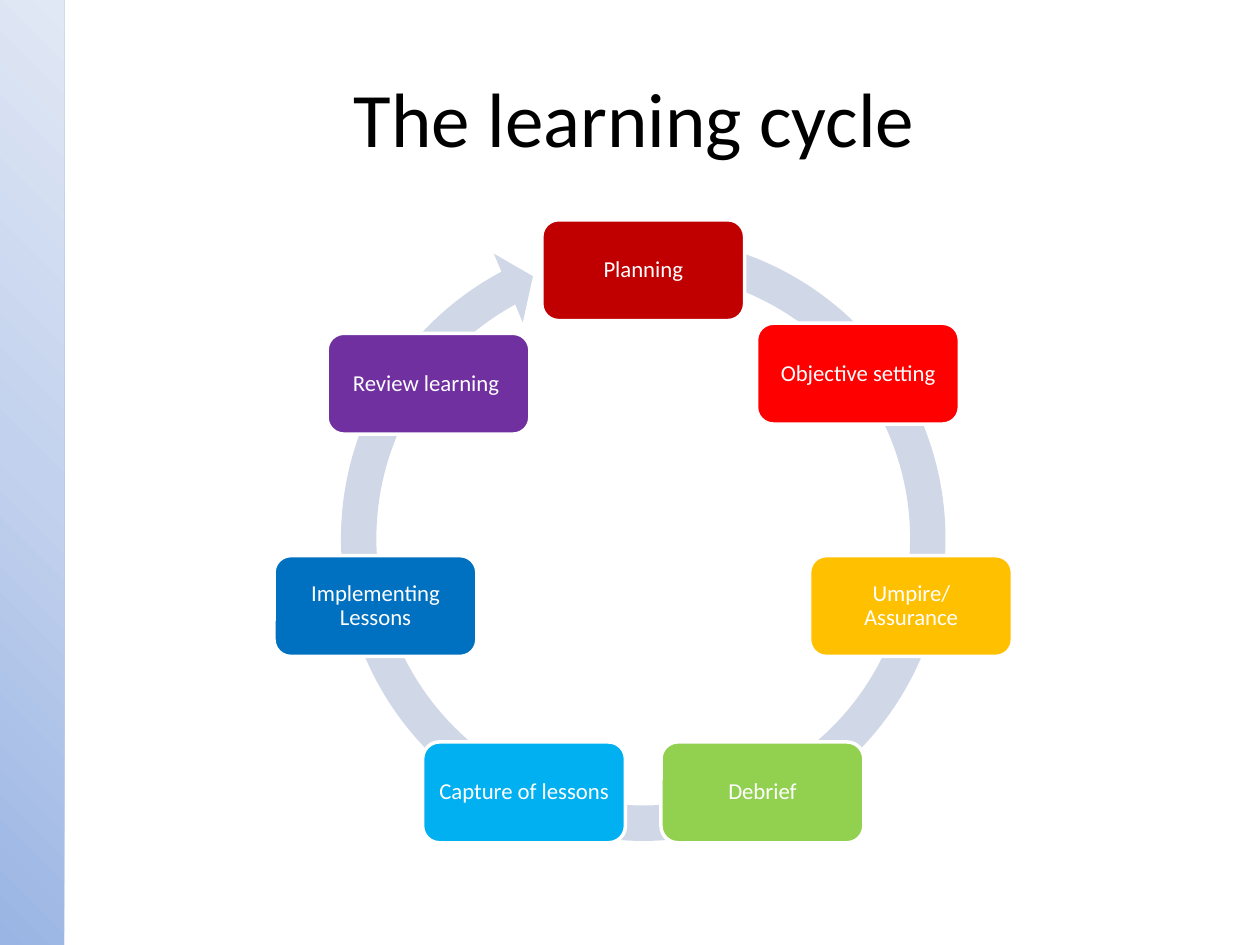
from math import cos, radians, sin

from lxml import etree
from pptx import Presentation
from pptx.dml.color import RGBColor
from pptx.enum.shapes import MSO_SHAPE
from pptx.enum.text import MSO_ANCHOR, PP_ALIGN
from pptx.oxml.ns import qn
from pptx.util import Inches, Pt

STEPS = [
    ("Planning", "C00000"),
    ("Objective setting", "FF0000"),
    ("Umpire/Assurance", "FFC000"),
    ("Debrief", "92D050"),
    ("Capture of lessons", "00B0F0"),
    ("Implementing Lessons", "0070C0"),
    ("Review learning ", "7030A0"),
]
STEP_NUDGE = {"Review learning ": 0.08}  # this step sits a little lower


def color(value):
    return RGBColor.from_string(value)


def add_filled_shape(page, kind, box, fill=None):
    shape = page.shapes.add_shape(kind, *(Inches(length) for length in box))
    shape.shadow.inherit = False
    shape.line.fill.background()
    if fill:
        shape.fill.solid()
        shape.fill.fore_color.rgb = color(fill)
    return shape


def write_text(shape, text, size, ink, inset, line_spacing=1.0):
    frame = shape.text_frame
    settings = {
        "word_wrap": True,
        "vertical_anchor": MSO_ANCHOR.MIDDLE,
        "margin_left": Inches(inset),
        "margin_right": Inches(inset),
        "margin_top": Inches(inset),
        "margin_bottom": Inches(inset),
    }
    for name, value in settings.items():
        setattr(frame, name, value)
    para = frame.paragraphs[0]
    para.alignment = PP_ALIGN.CENTER
    para.line_spacing = line_spacing
    span = para.add_run()
    span.text = text
    for name, value in {"name": "Calibri", "size": Pt(size)}.items():
        setattr(span.font, name, value)
    span.font.color.rgb = color(ink)


def add_side_band(page, box, stops):
    band = add_filled_shape(page, MSO_SHAPE.RECTANGLE, box)
    band.fill.gradient()
    band.fill.gradient_angle = 45
    # Replace the default stops with the three shades of the band
    stop_list = band.fill._fill._gradFill.find(qn("a:gsLst"))
    for stop in list(stop_list):
        stop_list.remove(stop)
    for percent, shade in stops:
        stop = etree.SubElement(stop_list, qn("a:gs"), pos=str(percent * 1000))
        etree.SubElement(stop, qn("a:srgbClr"), val=shade)


def add_title(page, box, text):
    title = page.shapes.add_textbox(*(Inches(length) for length in box))
    write_text(title, text, 44, "000000", 0.1)


def add_cycle(page, box):
    left, top, width, height = box
    # Ring with an arrowhead
    ring = add_filled_shape(page, MSO_SHAPE.CIRCULAR_ARROW, box, "D0D8E8")
    for index, value in enumerate([0.055, 3.307, 145.023, 169.579, 0.058]):
        ring.adjustments[index] = value

    # Steps, clockwise from the top at equal angles
    step_width, step_height, radius = 1.61, 0.8, 2.18
    center_x, center_y = left + width / 2, top + height / 2 + 0.05
    for index, (label, fill) in enumerate(STEPS):
        angle = radians(360 * index / len(STEPS))
        x = center_x + radius * sin(angle) - step_width / 2
        y = center_y - radius * cos(angle) - step_height / 2
        y += STEP_NUDGE.get(label, 0)
        step = add_filled_shape(page, MSO_SHAPE.ROUNDED_RECTANGLE,
                                (x, y, step_width, step_height), fill)
        step.line.color.rgb = color("FFFFFF")
        step.line.width = Pt(2)
        write_text(step, label, 13, "FFFFFF", 0.09, 0.9)


def main():
    deck = Presentation()
    deck.slide_width, deck.slide_height = Inches(10), Inches(7.5)
    page = deck.slides.add_slide(deck.slide_layouts[6])
    add_side_band(page, (0, 0, 0.51, 7.5),
                  [(0, "9AB5E4"), (50, "C2D1ED"), (100, "E1E8F5")])
    add_title(page, (0.67, 0.3, 8.87, 1.25), "The learning cycle ")
    add_cycle(page, (2.55, 1.72, 5.11, 5.11))
    deck.save("out.pptx")


if __name__ == "__main__":
    main()
